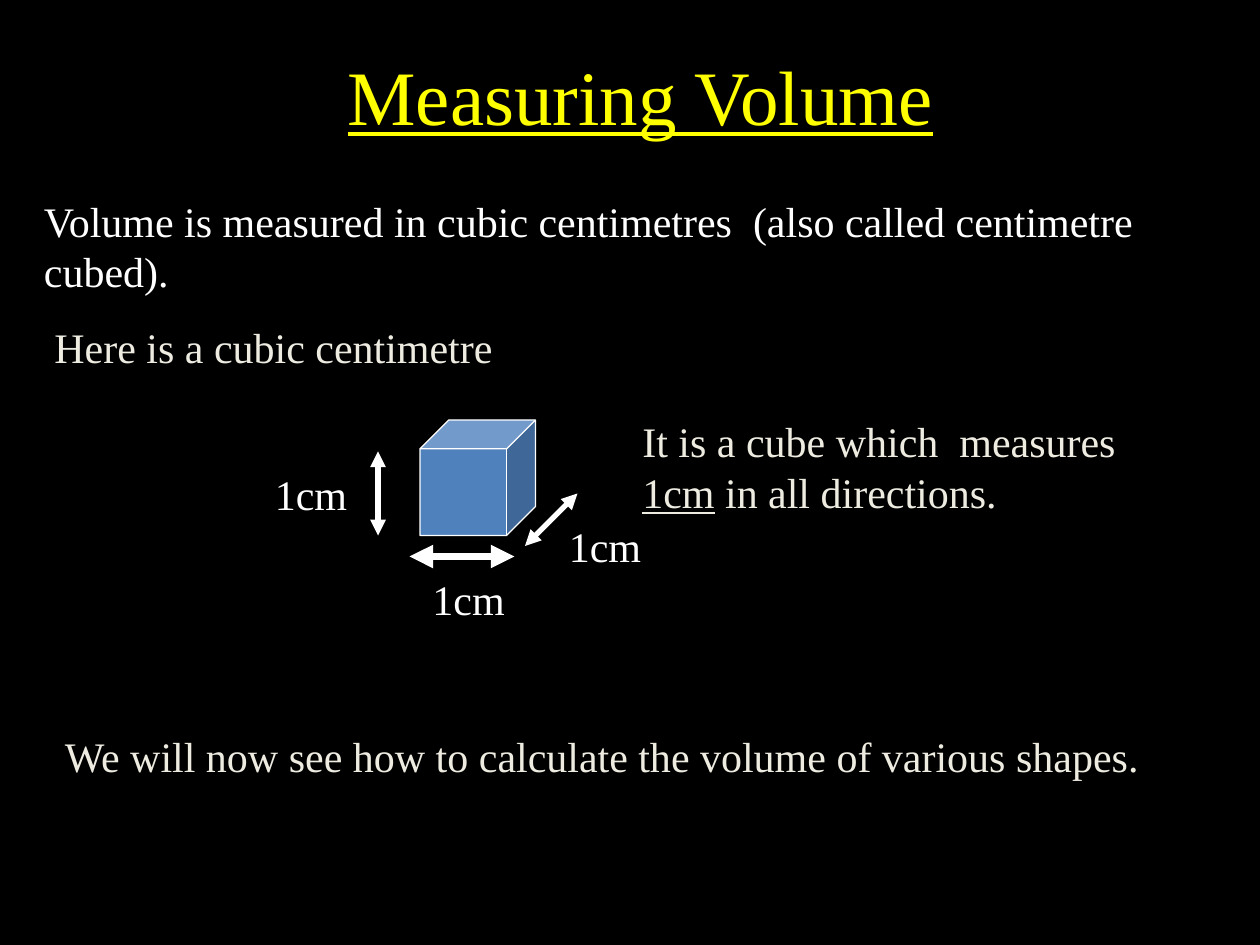
import pptx
import pptx.util
import pptx.dml.color
import pptx.enum.shapes
import pptx.enum.text
import pptx.oxml.ns
from lxml import etree

Pt = pptx.util.Pt
RGBColor = pptx.dml.color.RGBColor
BLACK = RGBColor(0x00, 0x00, 0x00)
WHITE = RGBColor(0xFF, 0xFF, 0xFF)
CREAM = RGBColor(0xEE, 0xEC, 0xE1)
YELLOW = RGBColor(0xFF, 0xFF, 0x00)
BLUE = RGBColor(0x4F, 0x81, 0xBD)
FONT = "Times New Roman"


def style_font(font, size, color):
    font.name = FONT
    font.size = Pt(size)
    font.color.rgb = color


def add_title(page, text):
    box = page.shapes.add_textbox(Pt(60), Pt(24), Pt(612), Pt(60))
    frame = box.text_frame
    frame.word_wrap = True
    frame.vertical_anchor = pptx.enum.text.MSO_ANCHOR.MIDDLE
    para = frame.paragraphs[0]
    para.alignment = pptx.enum.text.PP_ALIGN.CENTER
    span = para.add_run()
    span.text = text
    style_font(span.font, 44, YELLOW)
    span.font.underline = True


def add_text(page, left, top, width, height, color, *parts, underlined=None):
    """Add a body text box; the part equal to underlined gets a line below."""
    box = page.shapes.add_textbox(Pt(left), Pt(top), Pt(width), Pt(height))
    frame = box.text_frame
    frame.word_wrap = True
    frame.auto_size = pptx.enum.text.MSO_AUTO_SIZE.SHAPE_TO_FIT_TEXT
    para = frame.paragraphs[0]
    para.space_before = Pt(12)
    style_font(para.font, 24, color)
    for part in parts:
        span = para.add_run()
        span.text = part
        if part == underlined:
            span.font.underline = True


def add_cube(page, left, top, size):
    cube = page.shapes.add_shape(
        pptx.enum.shapes.MSO_SHAPE.CUBE, Pt(left), Pt(top), Pt(size), Pt(size))
    cube.shadow.inherit = False
    cube.fill.solid()
    cube.fill.fore_color.rgb = BLUE
    cube.line.color.rgb = WHITE
    cube.line.width = Pt(0.75)


def add_double_arrow(page, start, end, weight):
    arrow = page.shapes.add_connector(
        pptx.enum.shapes.MSO_CONNECTOR.STRAIGHT,
        Pt(start[0]), Pt(start[1]), Pt(end[0]), Pt(end[1]))
    arrow.line.color.rgb = WHITE
    arrow.line.width = Pt(weight)
    qn = pptx.oxml.ns.qn
    outline = arrow.line._get_or_add_ln()
    for tag in ("a:headEnd", "a:tailEnd"):
        etree.SubElement(outline, qn(tag), type="triangle")
    etree.SubElement(arrow._element.spPr, qn("a:effectLst"))


def add_dimensions(page):
    """Add the height, width and depth arrows with their labels."""
    dimensions = [
        ((216, 258), (216, 306), 3, (150, 264, 72)),
        ((234, 318), (294, 318), 4.5, (240, 324, 60)),
        ((300, 312), (330, 282), 3, (318, 294, 66)),
    ]
    for start, end, weight, (left, top, width) in dimensions:
        add_double_arrow(page, start, end, weight)
        add_text(page, left, top, width, 36, WHITE, "1cm")


def main():
    deck = pptx.Presentation()
    deck.slide_width, deck.slide_height = Pt(720), Pt(540)
    page = deck.slides.add_slide(deck.slide_layouts[6])
    page.background.fill.solid()
    page.background.fill.fore_color.rgb = BLACK

    add_title(page, "Measuring Volume")
    add_text(page, 18, 108, 666, 65.5, WHITE,
             "Volume is measured in cubic centimetres  (also called centimetre cubed).")
    add_text(page, 24, 180, 318, 36, CREAM, "Here is a cubic centimetre")
    add_cube(page, 240, 240, 66)
    add_text(page, 360, 234, 294, 65, CREAM,
             "It is a cube which  measures ", "1cm", " in all directions.",
             underlined="1cm")
    add_dimensions(page)
    add_text(page, 30, 414, 660, 36, CREAM,
             "We will now see how to calculate the volume of various shapes.")
    deck.save("out.pptx")


if __name__ == "__main__":
    main()
